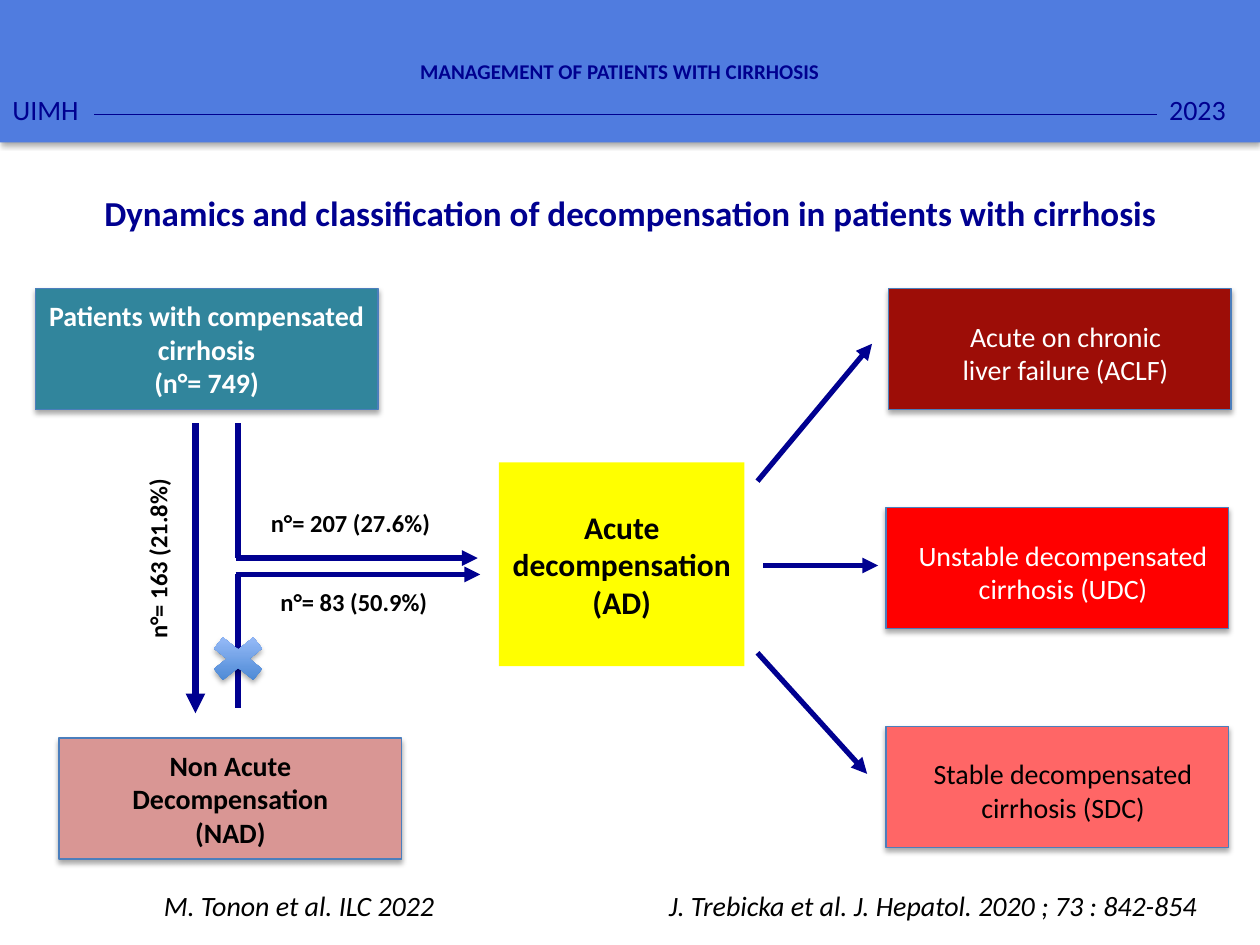
from dataclasses import dataclass

from lxml import etree
from pptx import Presentation
from pptx import util as u
from pptx.dml.color import RGBColor
from pptx.enum import shapes, text
from pptx.oxml.ns import qn


@dataclass(frozen=True)
class Theme:
    font: str = "Calibri"
    navy: str = "000090"
    band: str = "507CDF"
    outline: str = "4B7EBC"
    black: str = "000000"
    white: str = "FFFFFF"
    teal: str = "31859C"
    rose: str = "D99694"
    yellow: str = "FFFF00"
    dark_red: str = "9D0D07"
    red: str = "FF0000"
    light_red: str = "FF6666"
    cross_dark: str = "3F80CE"
    cross_light: str = "A4C4FF"
    title: int = 20
    focus: int = 18
    body: int = 16
    label: int = 14
    header: int = 12


theme = Theme()
CENTER, LEFT = text.PP_ALIGN.CENTER, text.PP_ALIGN.LEFT


def write(shape, lines, color=theme.black, size=theme.body, align=CENTER,
          wrap=True, margins=(0.25, 0.13, 0.25, 0.13), **styles):
    """Fill a shape with one paragraph per line; margins are left, top, right, bottom in cm."""
    frame = shape.text_frame
    frame.text = "\n".join(lines)
    left, top, right, bottom = map(u.Cm, margins)
    frame_format = {"word_wrap": wrap, "vertical_anchor": text.MSO_ANCHOR.MIDDLE,
                    "margin_left": left, "margin_top": top,
                    "margin_right": right, "margin_bottom": bottom}
    for name, value in frame_format.items():
        setattr(frame, name, value)
    for paragraph in frame.paragraphs:
        paragraph.alignment = align
        for name, value in {"name": theme.font, "size": u.Pt(size), **styles}.items():
            setattr(paragraph.font, name, value)
        paragraph.font.color.rgb = RGBColor.from_string(color)


def set_effects(shape, shadow=True):
    """Replace the inherited effects by a soft shadow below, or by none."""
    properties = shape.element.spPr
    effects = etree.SubElement(properties, qn("a:effectLst"))
    if shadow:
        outer = etree.SubElement(effects, qn("a:outerShdw"), blurRad="40000", dist="23000",
                                 dir="5400000", rotWithShape="0")
        color = etree.SubElement(outer, qn("a:srgbClr"), val=theme.black)
        etree.SubElement(color, qn("a:alpha"), val="35000")


presentation = Presentation()
presentation.slide_width, presentation.slide_height = u.Cm(25.4), u.Cm(19.05)
slide = presentation.slides.add_slide(presentation.slide_layouts[5])

title = slide.shapes.title
title.left, title.top, title.width, title.height = map(u.Cm, (0.53, 3.73, 24.36, 1.12))
write(title, ["Dynamics and classification of decompensation in patients with cirrhosis"],
      theme.navy, theme.title, bold=True)

# Filled boxes: position, size, fill, outline, shadow, text and its format
BOX_WIDTH, BOX_HEIGHT = 6.91, 2.44
OUTCOME_TOP, OUTCOME_PITCH = 5.82, 4.41
tight = {"bold": True, "wrap": False, "margins": (0.1, 0.1, 0.1, 0.1)}
outcome = {"margins": (0.48, 0.2, 0.25, 0.05), "wrap": False}
boxes = [
    (0, 0, 25.4, 2.87, theme.band, None, True, [], {}),
    (10.06, 9.32, 4.95, 4.11, theme.yellow, None, False,
     ["Acute decompensation (AD)"], {"size": theme.focus, "bold": True}),
    (0.71, OUTCOME_TOP, BOX_WIDTH, BOX_HEIGHT, theme.teal, theme.outline, True,
     ["Patients with compensated", "cirrhosis", "(n°= 749)"], {"color": theme.white, **tight}),
    (1.19, 14.88, BOX_WIDTH, BOX_HEIGHT, theme.rose, theme.outline, True,
     ["Non Acute", "Decompensation", "(NAD)"], tight),
]
outcomes = [
    (17.91, theme.dark_red, theme.white, ["Acute on chronic", "liver failure (ACLF)"]),
    (17.86, theme.red, theme.white, ["Unstable decompensated", "cirrhosis (UDC)"]),
    (17.86, theme.light_red, theme.black, ["Stable decompensated", "cirrhosis (SDC)"]),
]
for row, (left, fill, color, lines) in enumerate(outcomes):
    boxes.append((left, OUTCOME_TOP + row * OUTCOME_PITCH, BOX_WIDTH, BOX_HEIGHT, fill,
                  theme.outline, True, lines, {"color": color, **outcome}))

for left, top, width, height, fill, outline, shadow, lines, style in boxes:
    box = slide.shapes.add_shape(shapes.MSO_SHAPE.RECTANGLE,
                                 *map(u.Cm, (left, top, width, height)))
    box.fill.solid()
    box.fill.fore_color.rgb = RGBColor.from_string(fill)
    if outline:
        box.line.color.rgb = RGBColor.from_string(outline)
        box.line.width = u.Pt(0.75)
    else:
        box.line.fill.background()
    set_effects(box, shadow)
    if lines:
        write(box, lines, **style)

# Lines: start, end, width in points, arrowhead
FLOW_X, FLOW_TOP, UPPER_Y, LOWER_Y = 4.8, 8.53, 11.25, 11.58
CORNER_X = FLOW_X - 0.05
connectors = [
    (1.9, 2.31, 23.32, 2.31, 0.75, False),
    (15.27, 9.7, 17.58, 6.93, 3, True),
    (15.39, 11.4, 17.7, 11.4, 3, True),
    (15.27, 13.16, 17.48, 15.6, 3, True),
    (FLOW_X, FLOW_TOP, FLOW_X, UPPER_Y, 3, False),
    (CORNER_X, UPPER_Y, 9.63, UPPER_Y, 3, True),
    (FLOW_X, 14.27, FLOW_X, LOWER_Y, 3, False),
    (CORNER_X, LOWER_Y, 9.68, LOWER_Y, 3, True),
    (3.94, FLOW_TOP, 3.94, 14.38, 3.75, True),
]
for *ends, width, arrow in connectors:
    connector = slide.shapes.add_connector(shapes.MSO_CONNECTOR.STRAIGHT, *map(u.Cm, ends))
    connector.line.color.rgb = RGBColor.from_string(theme.navy)
    connector.line.width = u.Pt(width)
    if arrow:
        line = connector.element.spPr.find(qn("a:ln"))
        etree.SubElement(line, qn("a:tailEnd"), type="triangle")
    set_effects(connector, shadow=False)

# Free text: position, size, rotation, text and its format
header = {"color": theme.navy, "align": LEFT}
label = {"size": theme.label, "bold": True}
texts = [
    (1.7, 0, 21.59, 1.88, 0, "MANAGEMENT OF PATIENTS WITH CIRRHOSIS",
     {"color": theme.navy, "size": theme.header, "bold": True, "margins": (0.25, 1, 0.25, 0)}),
    (0, 1.73, 1.85, 0.94, 0, "UIMH", header),
    (23.32, 1.73, 2.08, 0.94, 0, "2023", header),
    (5.21, 10.11, 4.57, 0.86, 0, "n°= 207 (27.6%)", {"align": LEFT, **label}),
    (4.85, 11.71, 4.57, 0.86, 0, "n°= 83 (50.9%)", label),
    (0.89, 10.41, 4.57, 0.86, 270, "n°= 163 (21.8%)", {"align": LEFT, **label}),
    (0, 17.78, 12.06, 0.94, 0, "M. Tonon et al. ILC 2022", {"italic": True}),
    (12.22, 17.78, 13.18, 0.94, 0, "J. Trebicka et al. J. Hepatol. 2020 ; 73 : 842-854",
     {"italic": True}),
]
for left, top, width, height, rotation, words, style in texts:
    box = slide.shapes.add_textbox(*map(u.Cm, (left, top, width, height)))
    box.rotation = rotation
    write(box, [words], **style)

cross = slide.shapes.add_shape(shapes.MSO_SHAPE.MATH_MULTIPLY,
                               *map(u.Cm, (4.04, 12.67, 1.52, 1.22)))
cross.fill.gradient()
cross.fill.gradient_angle = 90
for stop, color in zip(cross.fill.gradient_stops, (theme.cross_dark, theme.cross_light)):
    stop.color.rgb = RGBColor.from_string(color)
cross.line.fill.background()
set_effects(cross)

presentation.save("out.pptx")
